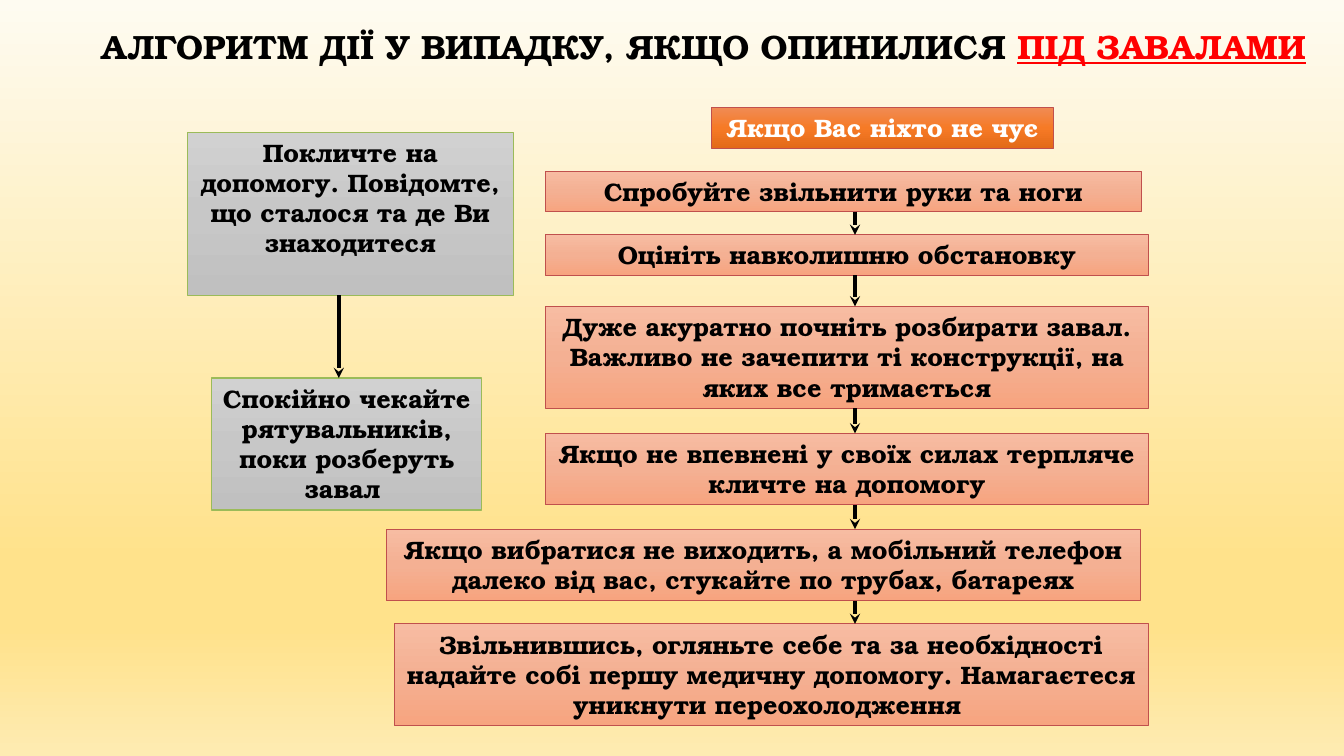
import dataclasses

import pptx
import pptx.dml.color
import pptx.enum.shapes
import pptx.enum.text
import pptx.oxml.ns
import pptx.util
from lxml import etree

Inches = pptx.util.Inches
Pt = pptx.util.Pt
qn = pptx.oxml.ns.qn


@dataclasses.dataclass(frozen=True)
class Theme:
    font: str = "TeX Gyre Bonum"
    head: int = 24
    text: int = 18
    edge: float = 0.75
    arrow: float = 2.5
    black: str = "000000"
    white: str = "FFFFFF"
    red: str = "FF0000"
    green: str = "9BBB59"
    brick: str = "C0504D"
    page: tuple = ((0, "FEFBF1"), (74, "FFE28B"), (83, "FFE28B"), (100, "FEEBB2"))
    grey: tuple = ((0, "D1D1D1"), (50, "C7C7C7"), (100, "C0C0C0"))
    orange: tuple = ((0, "F08B54"), (50, "F67A26"), (100, "E36A18"))
    peach: tuple = ((0, "F7BCA2"), (50, "F4B093"), (100, "F7A47F"))


THEME = Theme()

LEFT = [
    (0, 0, 3.23, 1.62, "Покличте на допомогу. Повідомте, що сталося та де Ви знаходитеся"),
    (0.24, 2.44, 2.68, 1.31, "Спокійно чекайте рятувальників, поки розберуть завал "),
]
RIGHT = [
    (1.58, 0, 5.91, 0.4, "Спробуйте звільнити руки та ноги"),
    (1.58, 0.63, 5.98, 0.4, "Оцініть навколишню обстановку"),
    (1.58, 1.34, 5.98, 1.01, "Дуже акуратно почніть розбирати завал. "
     "Важливо не зачепити ті конструкції, на яких все тримається"),
    (1.58, 2.6, 5.98, 0.71, "Якщо не впевнені у своїх силах терпляче кличте на допомогу"),
    (0, 3.55, 7.48, 0.71, "Якщо вибратися не виходить, а мобільний телефон "
     "далеко від вас, стукайте по трубах, батареях"),
    (0.08, 4.49, 7.48, 1.01, "Звільнившись, огляньте себе та за необхідності надайте собі "
     "першу медичну допомогу. Намагаєтеся уникнути переохолодження "),
]


def color(code):
    return pptx.dml.color.RGBColor.from_string(code)


def shade(fill, root, stops):
    fill.gradient()
    fill.gradient_angle = 270
    group = next(root.iter(qn("a:gsLst")))
    for stop in list(group):
        group.remove(stop)
    for place, code in stops:
        stop = etree.SubElement(group, qn("a:gs"), pos=str(place * 1000))
        etree.SubElement(stop, qn("a:srgbClr"), val=code)


def write(shape, runs, size):
    frame = shape.text_frame
    frame.word_wrap = True
    frame.auto_size = pptx.enum.text.MSO_AUTO_SIZE.NONE
    frame.vertical_anchor = pptx.enum.text.MSO_ANCHOR.TOP
    line = frame.paragraphs[0]
    line.alignment = pptx.enum.text.PP_ALIGN.CENTER
    for text, code, under in runs:
        run = line.add_run()
        run.text = text
        run.font.name = THEME.font
        run.font.size = Pt(size)
        run.font.bold = True
        run.font.underline = under
        run.font.color.rgb = color(code)


def title(slide, left, top, width, height):
    shape = slide.shapes.title
    shape.left, shape.top = Inches(left), Inches(top)
    shape.width, shape.height = Inches(width), Inches(height)
    write(shape, [
        ("АЛГОРИТМ ДІЇ У ВИПАДКУ, ЯКЩО ОПИНИЛИСЯ ", THEME.black, False),
        ("ПІД ЗАВАЛАМИ", THEME.red, True),
    ], THEME.head)


def block(slide, left, top, width, height, text, stops, edge, ink):
    shape = slide.shapes.add_shape(
        pptx.enum.shapes.MSO_SHAPE.RECTANGLE,
        Inches(left), Inches(top), Inches(width), Inches(height))
    shape.shadow.inherit = False
    shade(shape.fill, shape.element.spPr, stops)
    shape.line.color.rgb = color(edge)
    shape.line.width = Pt(THEME.edge)
    write(shape, [(text, ink, False)], THEME.text)


def arrow(slide, x, start, end):
    link = slide.shapes.add_connector(
        pptx.enum.shapes.MSO_CONNECTOR.STRAIGHT,
        Inches(x), Inches(start), Inches(x), Inches(end))
    link.line.color.rgb = color(THEME.black)
    link.line.width = Pt(THEME.arrow)
    props = link.element.spPr
    etree.SubElement(props.find(qn("a:ln")), qn("a:tailEnd"), type="stealth")
    etree.SubElement(props, qn("a:effectLst"))


def flow(slide, left, top, axis, steps, stops, edge):
    for x, y, width, height, text in steps:
        block(slide, left + x, top + y, width, height, text, stops, edge, THEME.black)
    for above, below in zip(steps, steps[1:]):
        arrow(slide, left + axis, top + above[1] + above[3], top + below[1])


def main():
    deck = pptx.Presentation()
    deck.slide_width, deck.slide_height = Inches(13.33), Inches(7.5)
    slide = deck.slides.add_slide(deck.slide_layouts.get_by_name("Title Only"))
    shade(slide.background.fill, slide.element, THEME.page)
    title(slide, 0.73, 0.21, 12.5, 0.5)
    flow(slide, 1.86, 1.31, 1.5, LEFT, THEME.grey, THEME.green)
    block(slide, 7.06, 1.07, 3.39, 0.4, "Якщо Вас ніхто не чує",
          THEME.orange, THEME.brick, THEME.white)
    flow(slide, 3.83, 1.7, 4.65, RIGHT, THEME.peach, THEME.brick)
    deck.save("out.pptx")


if __name__ == "__main__":
    main()
